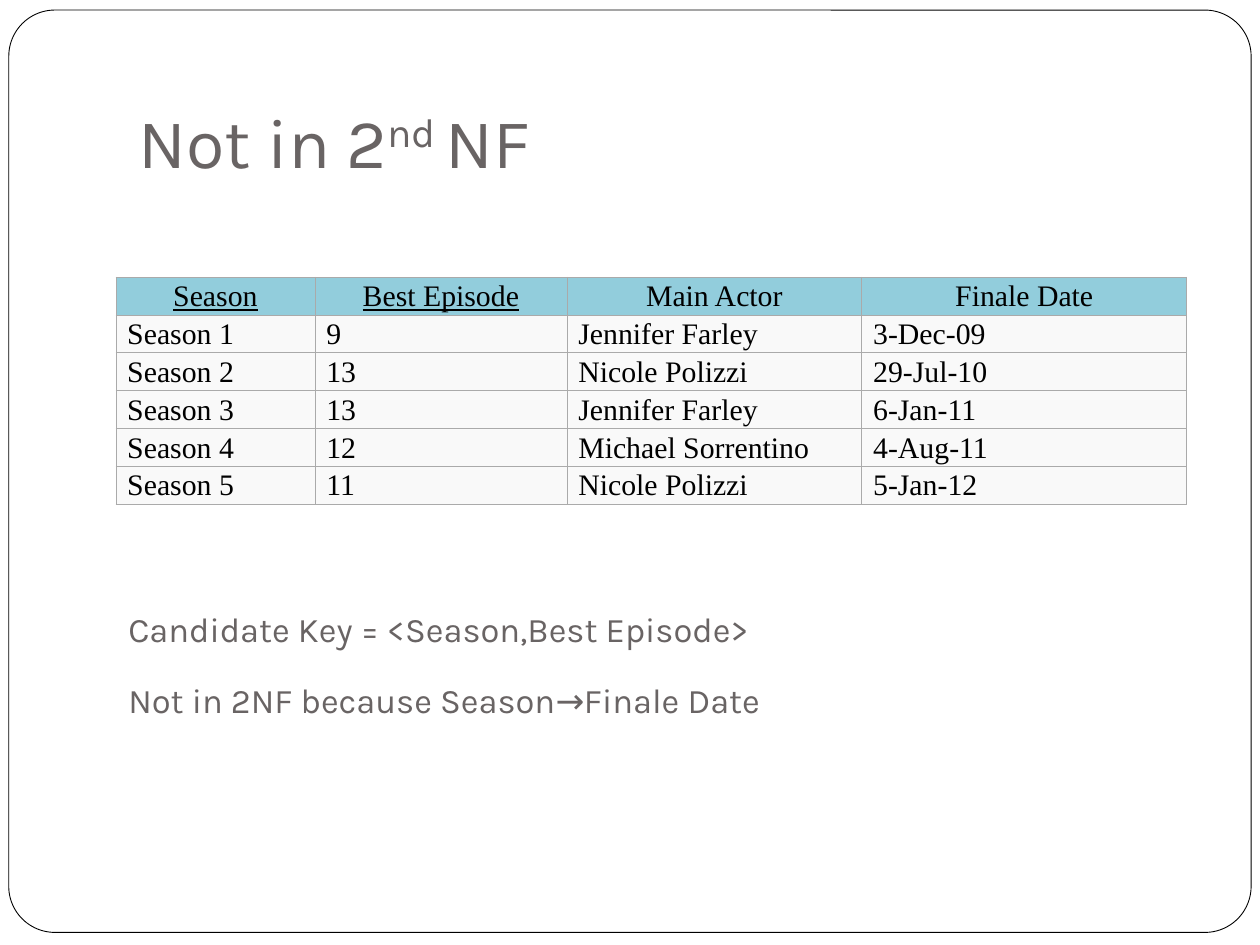
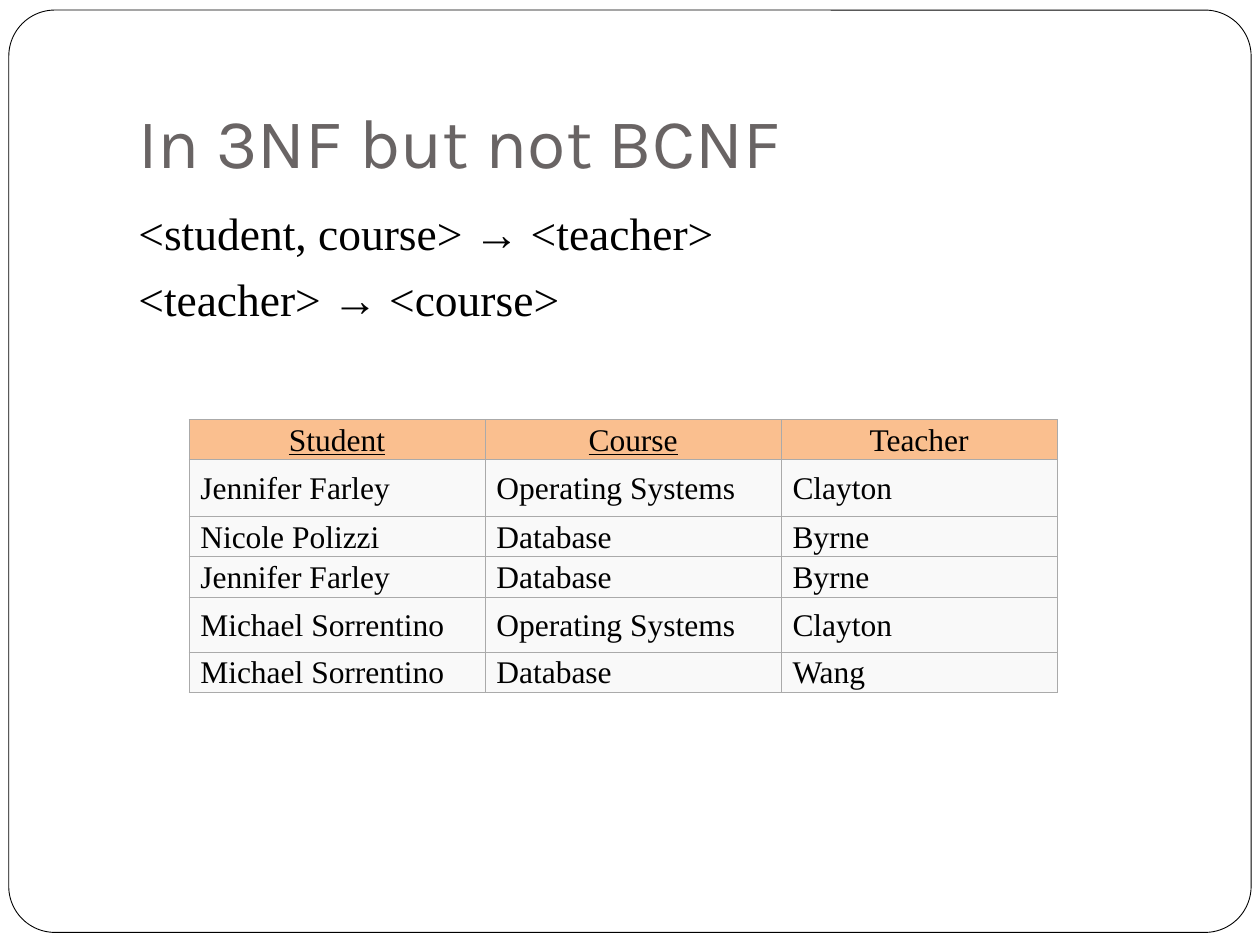
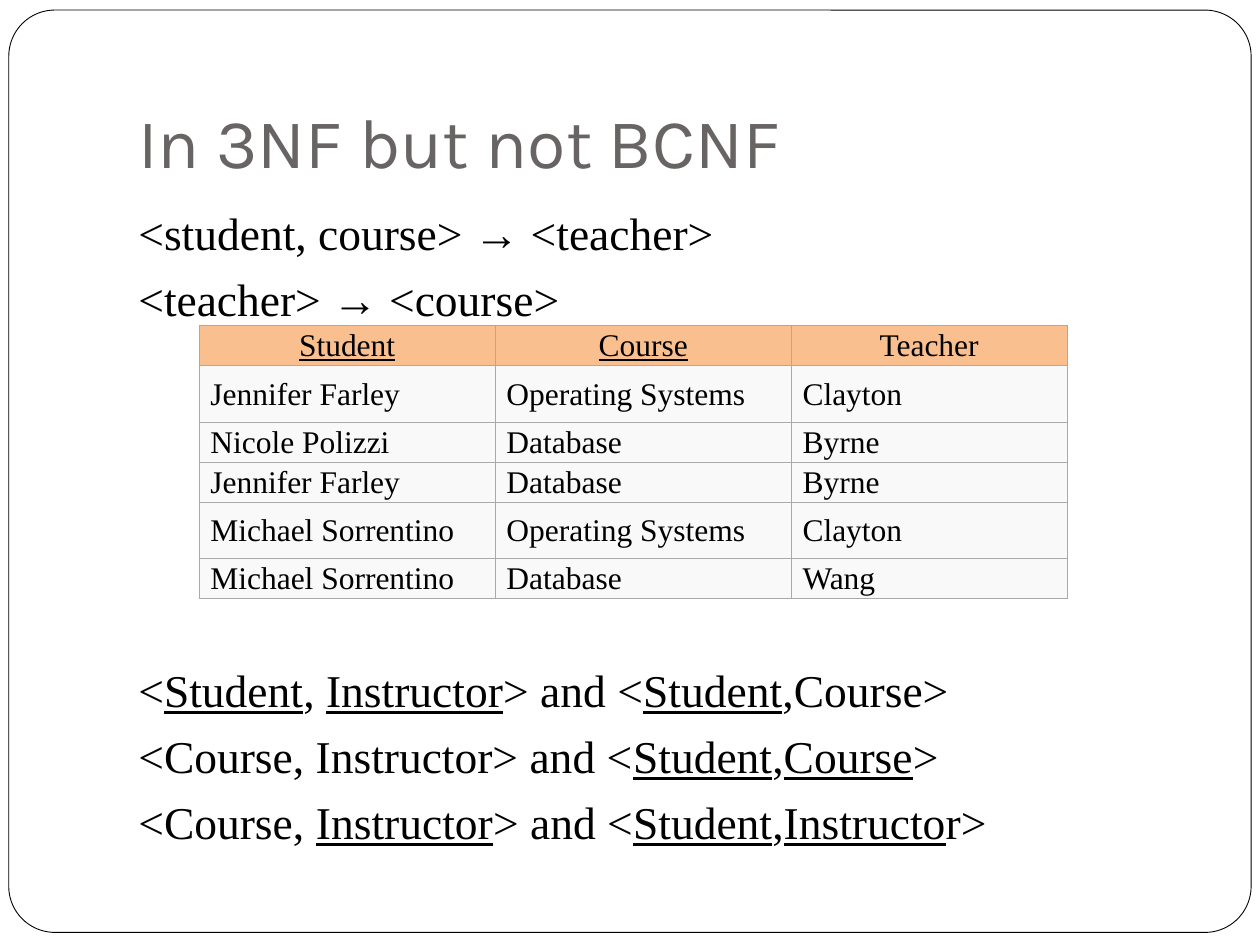
import pptx
import pptx.dml.color
import pptx.enum.shapes
import pptx.enum.text
import pptx.oxml
import pptx.oxml.ns
import pptx.util

EMU_PER_PX = 9144
SANS, SERIF = "Karla", "Times New Roman"
GRAY, BLACK, WHITE = "696464", "000000", "FFFFFF"
BLUE, ORANGE, CELL_FILL, BORDER = "92CDDC", "FABF8F", "F9F9F9", "AAAAAA"
color = pptx.dml.color.RGBColor.from_string
anchors = pptx.enum.text.MSO_ANCHOR


def px(*lengths):
    return [pptx.util.Emu(length * EMU_PER_PX) for length in lengths]


def write(paragraph, text, font, size, hex_color):
    for i, part in enumerate(text.split("_")):
        for j, piece in enumerate(part.split("^")):
            if not piece:
                continue
            run = paragraph.add_run()
            run.text = piece
            run.font.name = font
            run.font.size = pptx.util.Pt(size)
            run.font.color.rgb = color(hex_color)
            if i % 2:
                run.font.underline = True
            if j % 2:
                run.font._element.set("baseline", "30000")


season_rows = [
    ["_Season_", "_Best Episode_", "Main Actor", "Finale Date"],
    ["Season 1", "9", "Jennifer Farley", "3-Dec-09"],
    ["Season 2", "13", "Nicole Polizzi", "29-Jul-10"],
    ["Season 3", "13", "Jennifer Farley", "6-Jan-11"],
    ["Season 4", "12", "Michael Sorrentino", "4-Aug-11"],
    ["Season 5", "11", "Nicole Polizzi", "5-Jan-12"],
]
course_rows = [
    ["_Student_", "_Course_", "Teacher"],
    ["Jennifer Farley", "Operating Systems", "Clayton"],
    ["Nicole Polizzi", "Database", "Byrne"],
    ["Jennifer Farley", "Database", "Byrne"],
    ["Michael Sorrentino", "Operating Systems", "Clayton"],
    ["Michael Sorrentino", "Database", "Wang"],
]
season_table = (season_rows, [158, 200, 234, 258], [30] * 6, BLUE, 17)
course_table = (course_rows, [235, 235, 219], [32, 45, 32, 32, 44, 32], ORANGE, 18)

LINE_GAP, TABLE_GAP = 6.6, 192
key_style = (SANS, 34, GRAY, anchors.BOTTOM, 10)
body_style = (SERIF, 26, BLACK, anchors.TOP, 5)
body_place = (100, 158, 850, 500)
dependencies = [
    ("<student, course> → <teacher>", LINE_GAP),
    ("<teacher> → <course>", LINE_GAP),
]
decompositions = [
    ("<_Student_, _Instructor_> and <_Student_,Course>", TABLE_GAP),
    ("<Course, Instructor> and <_Student_,_Course_>", LINE_GAP),
    ("<Course, _Instructor_> and <_Student_,_Instructo_r>", LINE_GAP),
]
keys = [
    ("^Candidate Key = <Season,Best Episode>^", 0),
    ("^Not in 2NF because Season→Finale Date^", 0),
]
slides = [
    ("Not in 2^nd ^NF", (92, 475, 850, 125), key_style, keys, season_table, (92, 220)),
    ("In 3NF but not BCNF", body_place, body_style, dependencies, course_table, (150, 333)),
    ("In 3NF but not BCNF", body_place, body_style, dependencies + decompositions,
     course_table, (158, 258)),
]
title_place = (100, 30, 850, 125)
title_style = (SANS, 40, GRAY, anchors.BOTTOM, 10)

presentation = pptx.Presentation()
presentation.slide_width, presentation.slide_height = px(1000, 750)

for title, text_place, text_style, lines, table_content, table_corner in slides:
    slide = presentation.slides.add_slide(presentation.slide_layouts[6])

    frame = slide.shapes.add_shape(
        pptx.enum.shapes.MSO_SHAPE.ROUNDED_RECTANGLE, *px(7, 8, 986, 732))
    frame.adjustments[0] = 0.05
    frame.shadow.inherit = False
    frame.fill.solid()
    frame.fill.fore_color.rgb = color(WHITE)
    frame.line.color.rgb = color(BLACK)
    frame.line.width = pptx.util.Pt(0.5)

    for place, style, paragraphs in [
        (title_place, title_style, [(title, 0)]),
        (text_place, text_style, lines),
    ]:
        font, size, hex_color, anchor, bottom = style
        text_frame = slide.shapes.add_textbox(*px(*place)).text_frame
        text_frame.word_wrap = True
        text_frame.vertical_anchor = anchor
        (text_frame.margin_left, text_frame.margin_top,
         text_frame.margin_right, text_frame.margin_bottom) = px(10, 5, 10, bottom)
        for index, (text, space_before) in enumerate(paragraphs):
            paragraph = text_frame.add_paragraph() if index else text_frame.paragraphs[0]
            paragraph.space_before = pptx.util.Pt(space_before)
            write(paragraph, text, font, size, hex_color)

    rows, widths, heights, header_fill, size = table_content
    table = slide.shapes.add_table(
        len(rows), len(widths), *px(*table_corner, sum(widths), sum(heights))).table
    table.horz_banding = False
    table.first_row = False
    for column, width in zip(table.columns, px(*widths)):
        column.width = width
    for row, height in zip(table.rows, px(*heights)):
        row.height = height
    for row_index, values in enumerate(rows):
        is_header = row_index == 0
        for column_index, value in enumerate(values):
            cell = table.cell(row_index, column_index)
            cell.vertical_anchor = anchors.MIDDLE
            (cell.margin_left, cell.margin_top,
             cell.margin_right, cell.margin_bottom) = px(1 if is_header else 9, 1, 1, 0)
            paragraph = cell.text_frame.paragraphs[0]
            if is_header:
                paragraph.alignment = pptx.enum.text.PP_ALIGN.CENTER
            write(paragraph, value, SERIF, size, BLACK)
            properties = cell._tc.get_or_add_tcPr()
            for side in ("lnL", "lnR", "lnT", "lnB"):
                properties.append(pptx.oxml.parse_xml(
                    f'<a:{side} {pptx.oxml.ns.nsdecls("a")} w="6350"><a:solidFill>'
                    f'<a:srgbClr val="{BORDER}"/></a:solidFill></a:{side}>'))
            cell.fill.solid()
            cell.fill.fore_color.rgb = color(header_fill if is_header else CELL_FILL)

presentation.save("out.pptx")
